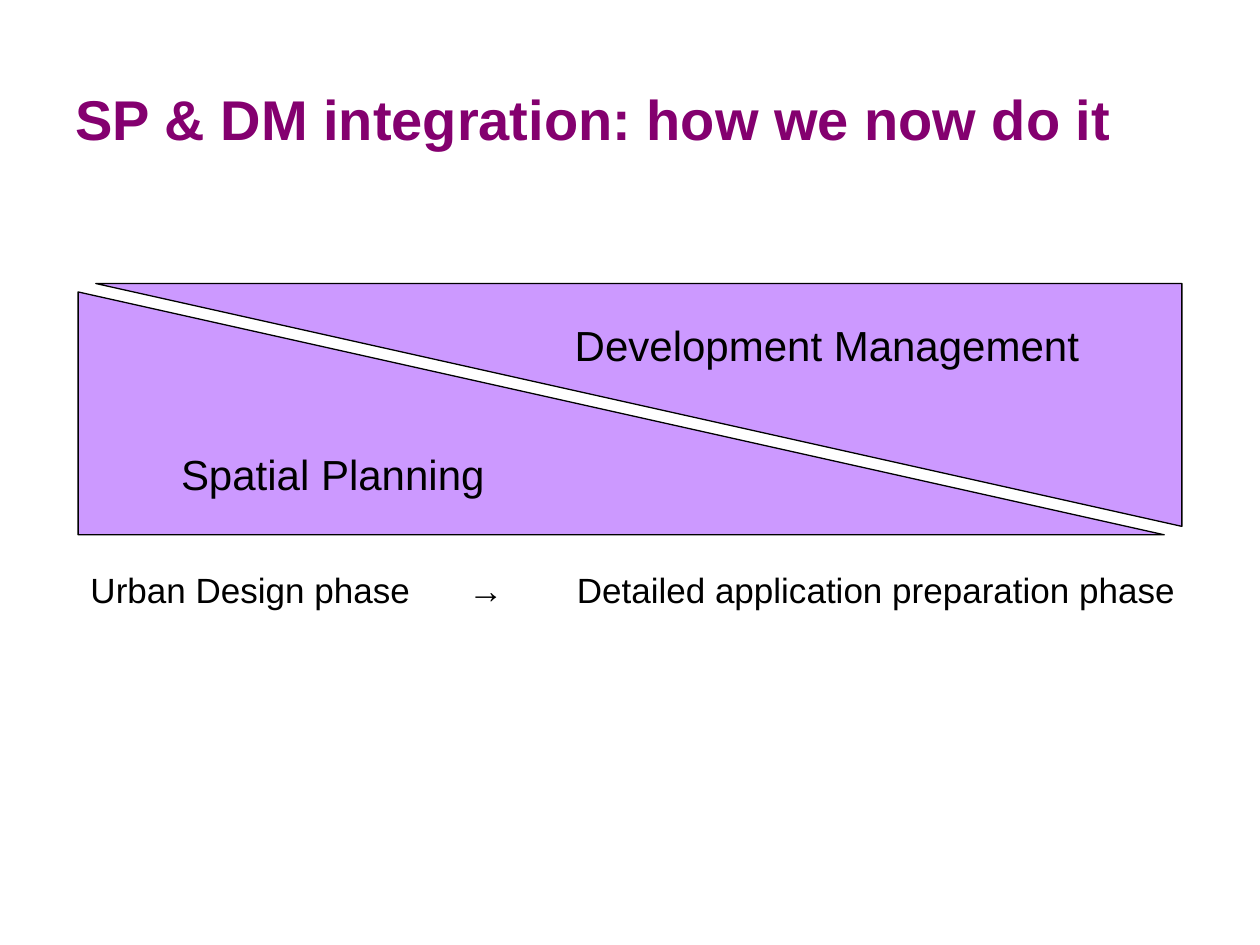
from lxml.etree import SubElement
from pptx import Presentation
from pptx.dml.color import RGBColor
from pptx.enum.shapes import MSO_SHAPE as Shape
from pptx.enum.text import MSO_ANCHOR as Anchor, PP_ALIGN as Align
from pptx.oxml.ns import qn
from pptx.util import Inches, Pt


def color(value):
    return RGBColor.from_string(value)


class SlideBuilder:
    font_name = "Arial"
    ink = "000000"
    accent = "84006F"
    wedge_fill = "CC99FF"

    def __init__(self, presentation):
        self.width = presentation.slide_width
        self.height = presentation.slide_height
        self.slide = presentation.slides.add_slide(presentation.slide_layouts[5])

    def box(self, left, top, width, height):
        return (int(left * self.width), int(top * self.height),
                int(width * self.width), int(height * self.height))

    def set_text(self, shape, text, size, ink, align=Align.LEFT, bold=False):
        paragraph = shape.text_frame.paragraphs[0]
        paragraph.text = text
        paragraph.alignment = align
        for run in paragraph.runs:
            run.font.name = self.font_name
            run.font.size = Pt(size)
            run.font.bold = bold
            run.font.color.rgb = color(ink)

    def title(self, text, *place):
        shape = self.slide.shapes.title
        shape.left, shape.top, shape.width, shape.height = self.box(*place)
        shape.text_frame.vertical_anchor = Anchor.MIDDLE
        self.set_text(shape, text, 32, self.accent, bold=True)

    def wedge(self, text, *place, turned=False):
        shape = self.slide.shapes.add_shape(Shape.RIGHT_TRIANGLE, *self.box(*place))
        shape.shadow.inherit = False
        shape.fill.solid()
        shape.fill.fore_color.rgb = color(self.wedge_fill)
        shape.line.color.rgb = color(self.ink)
        shape.line.width = Pt(0.75)
        shape.text_frame.word_wrap = False
        shape.text_frame.vertical_anchor = Anchor.MIDDLE
        if turned:
            shape.rotation = 180
            shape.element.txBody.bodyPr.set("rot", str(180 * 60000))
        self.set_text(shape, text, 24, self.ink, Align.RIGHT if turned else Align.LEFT)

    def phases(self, labels, stops, *place):
        shape = self.slide.shapes.add_textbox(*self.box(*place))
        shape.text_frame.word_wrap = True
        paragraph = shape.text_frame.paragraphs[0]
        tabs = SubElement(paragraph._p.get_or_add_pPr(), qn("a:tabLst"))
        for stop in stops:
            SubElement(tabs, qn("a:tab"), pos=str(int(stop * self.width)), algn="l")
        self.set_text(shape, "\t".join(labels), 20, self.ink)


def main():
    presentation = Presentation()
    presentation.slide_width = Inches(10)
    presentation.slide_height = Inches(7.5)
    builder = SlideBuilder(presentation)

    builder.title("SP & DM integration: how we now do it", 0.05, 0.04, 0.9, 0.17)
    wedge_width, wedge_height = 0.862, 0.257
    builder.wedge("Spatial Planning", 0.062, 0.309, wedge_width, wedge_height)
    builder.wedge("Development Management", 0.076, 0.3, wedge_width, wedge_height,
                  turned=True)
    builder.phases(
        ("Urban Design phase", "→", "Detailed application preparation phase"),
        (0.3, 0.386), 0.062, 0.595, 0.89, 0.06)

    presentation.save("out.pptx")


if __name__ == "__main__":
    main()
